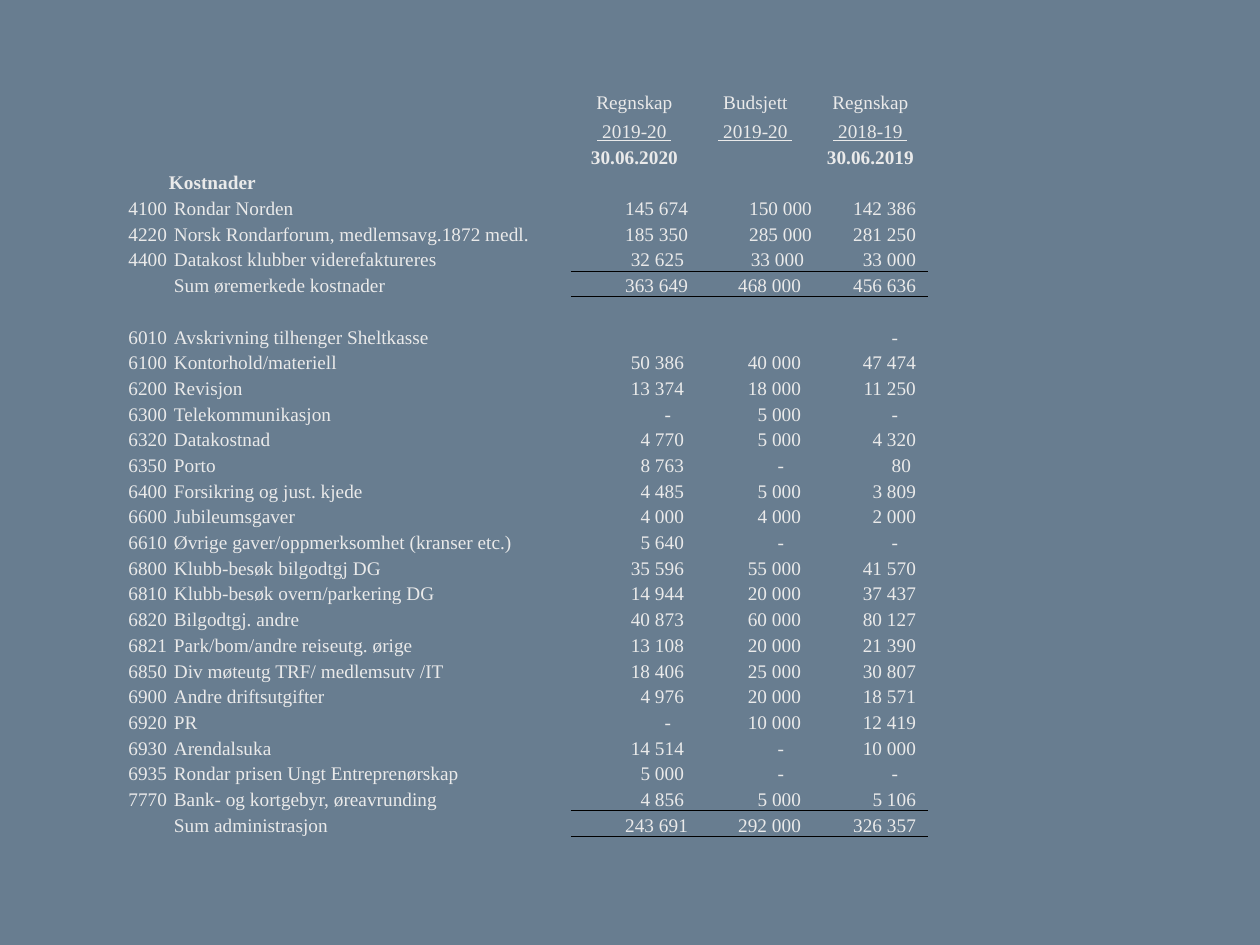
from lxml.etree import SubElement
from pptx import Presentation
from pptx.dml.color import RGBColor
from pptx.enum.text import MSO_ANCHOR, PP_ALIGN
from pptx.oxml.ns import qn
from pptx.util import Emu, Pt

COLORS = {"background": "687D90", "text": "EAEAEA", "rule": "000000"}
FONT = "Times New Roman"
FONT_SIZE = 11
NO_STYLE = "{2D5ABB26-0587-4C30-8999-92F81FD0307C}"
COLUMN_WIDTHS = [55, 329, 74, 127, 115, 115]
TALL_ROW, TALL_HEIGHT = 1, 29
AMOUNT_COLUMNS = [3, 4, 5]
NUMBER_MARGINS = {3: 14, 4: 12, 5: 12}
DASH_MARGINS = {3: 27, 4: 29, 5: 30}
SPECIAL_MARGINS = {("4100", 4): 1, ("4220", 4): 1, ("4400", 4): 9, ("6350", 5): 17}
WIDE_LABELS = {"4220", "4400", "6610"}

HEADERS = [
    (["Regnskap", "Budsjett", "Regnskap"], {}),
    ([" 2019-20 ", " 2019-20 ", " 2018-19 "], {"underline": True}),
    (["30.06.2020", "", "30.06.2019"], {"bold": True}),
]
SECTION = "Kostnader"
ACCOUNTS = [
    ("4100", "Rondar Norden", "145 674", "150 000", "142 386"),
    ("4220", "Norsk Rondarforum, medlemsavg.1872 medl.", "185 350", "285 000", "281 250"),
    ("4400", "Datakost klubber viderefaktureres", "32 625", "33 000", "33 000"),
    ("", "Sum øremerkede kostnader", "363 649", "468 000", "456 636"),
    ("", "", "", "", ""),
    ("6010", "Avskrivning tilhenger Sheltkasse", "", "", "-"),
    ("6100", "Kontorhold/materiell", "50 386", "40 000", "47 474"),
    ("6200", "Revisjon", "13 374", "18 000", "11 250"),
    ("6300", "Telekommunikasjon", "-", "5 000", "-"),
    ("6320", "Datakostnad", "4 770", "5 000", "4 320"),
    ("6350", "Porto", "8 763", "-", "80"),
    ("6400", "Forsikring og just. kjede", "4 485", "5 000", "3 809"),
    ("6600", "Jubileumsgaver", "4 000", "4 000", "2 000"),
    ("6610", "Øvrige gaver/oppmerksomhet (kranser etc.)", "5 640", "-", "-"),
    ("6800", "Klubb-besøk bilgodtgj DG", "35 596", "55 000", "41 570"),
    ("6810", "Klubb-besøk overn/parkering DG", "14 944", "20 000", "37 437"),
    ("6820", "Bilgodtgj. andre", "40 873", "60 000", "80 127"),
    ("6821", "Park/bom/andre reiseutg. ørige", "13 108", "20 000", "21 390"),
    ("6850", "Div møteutg TRF/ medlemsutv /IT", "18 406", "25 000", "30 807"),
    ("6900", "Andre driftsutgifter", "4 976", "20 000", "18 571"),
    ("6920", "PR", "-", "10 000", "12 419"),
    ("6930", "Arendalsuka", "14 514", "-", "10 000"),
    ("6935", "Rondar prisen Ungt Entreprenørskap", "5 000", "-", "-"),
    ("7770", "Bank- og kortgebyr, øreavrunding", "4 856", "5 000", "5 106"),
    ("", "Sum administrasjon", "243 691", "292 000", "326 357"),
]


def px(length):
    return Emu(round(length * 914400 / 126))


def write_text(cell, text, align=PP_ALIGN.LEFT, left=1, right=1, bold=False, underline=False):
    cell.margin_left, cell.margin_right = px(left), px(right)
    paragraph = cell.text_frame.paragraphs[0]
    paragraph.alignment = align
    run = paragraph.add_run()
    run.text = text
    font = run.font
    font.name, font.size = FONT, Pt(FONT_SIZE)
    font.bold, font.underline = bold, underline
    font.color.rgb = RGBColor.from_string(COLORS["text"])


def prepare_cell(cell):
    cell.margin_left = cell.margin_right = cell.margin_top = px(1)
    cell.margin_bottom = 0
    cell.vertical_anchor = MSO_ANCHOR.BOTTOM
    cell.fill.background()
    paragraph = cell.text_frame.paragraphs[0]
    SubElement(paragraph._p, qn("a:endParaRPr"), sz=str(FONT_SIZE * 100))


def add_rules(cell):
    properties = cell._tc.get_or_add_tcPr()
    for position, tag in enumerate(["a:lnT", "a:lnB"]):
        line = SubElement(properties, qn(tag), w=str(Pt(0.5)))
        fill = SubElement(line, qn("a:solidFill"))
        SubElement(fill, qn("a:srgbClr"), val=COLORS["rule"])
        properties.insert(position, line)


def amount_margin(code, column, amount):
    if amount == "-":
        return DASH_MARGINS[column]
    if column == 3 and len(amount) == 7:
        return 10
    return SPECIAL_MARGINS.get((code, column), NUMBER_MARGINS[column])


def fill_headers(table):
    for row, (labels, style) in enumerate(HEADERS):
        for column, label in zip(AMOUNT_COLUMNS, labels):
            if label:
                write_text(table.cell(row, column), label, align=PP_ALIGN.CENTER, **style)
    write_text(table.cell(len(HEADERS), 1), SECTION, bold=True)


def fill_account(table, row, code, label, amounts):
    if code:
        write_text(table.cell(row, 0), code, align=PP_ALIGN.RIGHT)
    if code in WIDE_LABELS:
        table.cell(row, 1).merge(table.cell(row, 2))
    if label:
        write_text(table.cell(row, 1), label, left=6)
    for column, amount in zip(AMOUNT_COLUMNS, amounts):
        cell = table.cell(row, column)
        if amount:
            write_text(cell, amount, align=PP_ALIGN.RIGHT,
                       right=amount_margin(code, column, amount))
        if label.startswith("Sum"):
            add_rules(cell)


def add_accounts_table(slide, left, top, width, height):
    row_count = len(HEADERS) + 1 + len(ACCOUNTS)
    shape = slide.shapes.add_table(row_count, len(COLUMN_WIDTHS),
                                   px(left), px(top), px(width), px(height))
    table = shape.table
    table.first_row = table.horz_banding = False
    table._tbl.tblPr.find(qn("a:tableStyleId")).text = NO_STYLE
    for column, column_width in zip(table.columns, COLUMN_WIDTHS):
        column.width = px(column_width)
    row_height = (height - TALL_HEIGHT) / (row_count - 1)
    for index, row in enumerate(table.rows):
        row.height = px(TALL_HEIGHT if index == TALL_ROW else row_height)
    for cell in table.iter_cells():
        prepare_cell(cell)
    fill_headers(table)
    for row, (code, label, *amounts) in enumerate(ACCOUNTS, len(HEADERS) + 1):
        fill_account(table, row, code, label, amounts)


def main():
    presentation = Presentation()
    presentation.slide_width, presentation.slide_height = px(1260), px(945)
    slide = presentation.slides.add_slide(presentation.slide_layouts[6])
    background = slide.background.fill
    background.solid()
    background.fore_color.rgb = RGBColor.from_string(COLORS["background"])
    add_accounts_table(slide, left=113, top=88, width=sum(COLUMN_WIDTHS), height=749)
    presentation.save("out.pptx")


if __name__ == "__main__":
    main()
